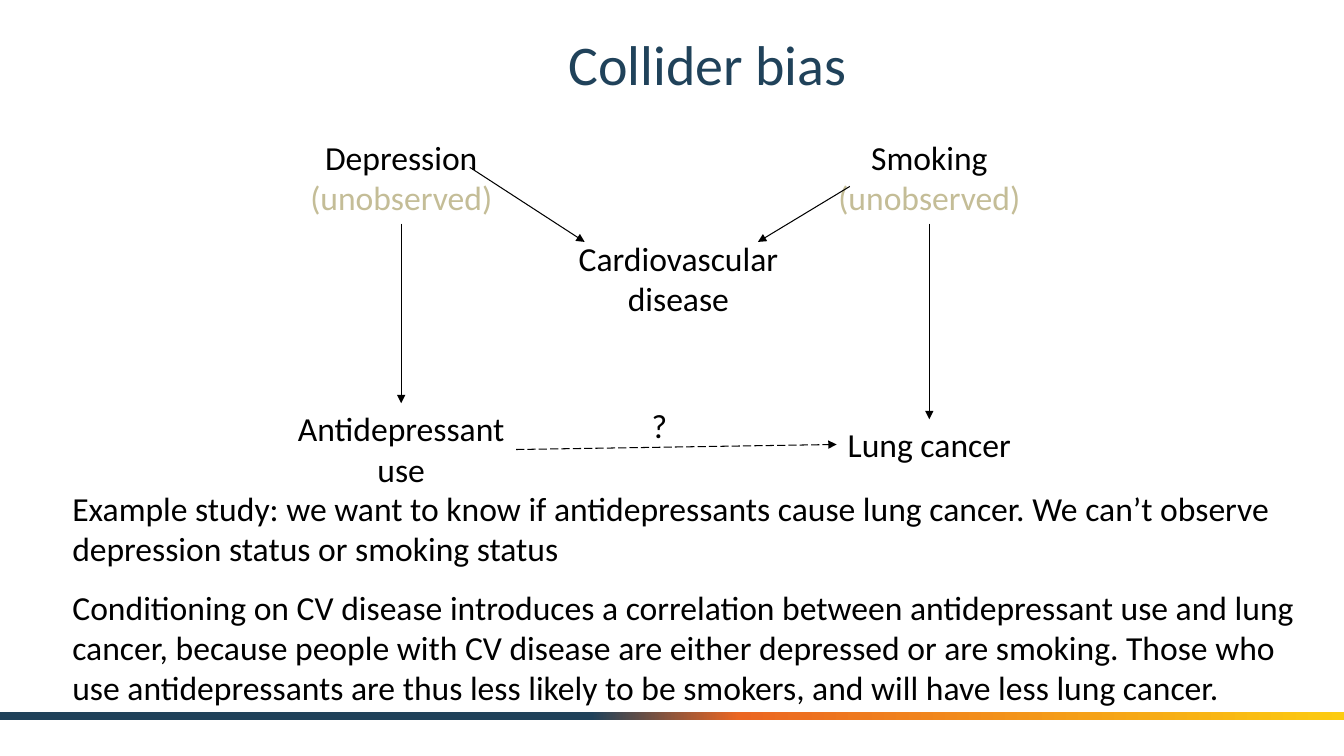
import copy

import lxml.etree
import pptx
import pptx.dml.color
import pptx.enum.dml
import pptx.enum.shapes
import pptx.enum.text
import pptx.oxml
import pptx.oxml.ns
import pptx.util

Pt = pptx.util.Pt
RGBColor = pptx.dml.color.RGBColor
PP_ALIGN = pptx.enum.text.PP_ALIGN

NAVY = RGBColor(0x20, 0x42, 0x5A)
ORANGE = RGBColor(0xEB, 0x66, 0x22)
YELLOW = RGBColor(0xFC, 0xCB, 0x10)
BLACK = RGBColor(0, 0, 0)
TAN = RGBColor(0xC4, 0xBD, 0x97)

# Content
TITLE = "Collider bias"
LEFT_X, MIDDLE_X, RIGHT_X = 286.6, 484.6, 663.8
# Lines with colours, centre, top, width
NODES = [
    ([("Depression", BLACK), ("(unobserved)", TAN)], LEFT_X, 94.3, 146),
    ([("Smoking", BLACK), ("(unobserved)", TAN)], RIGHT_X, 94.3, 146),
    ([("Cardiovascular", BLACK), ("disease", BLACK)], MIDDLE_X, 166.3, 158.4),
    ([("Antidepressant", BLACK), ("use", BLACK)], LEFT_X, 288, 163.4),
    ([("Lung cancer", BLACK)], RIGHT_X, 299.5, 132.5),
    ([("?", BLACK)], 470.9, 285.8, 26),
]
# Start, end, dashed
ARROWS = [
    ((LEFT_X, 159.8), (LEFT_X, 288), False),
    ((335.5, 119.5), (417.6, 172.8), False),
    ((607, 133.2), (541.4, 172.8), False),
    ((RIGHT_X, 159.8), (RIGHT_X, 299.5), False),
    ((368.6, 321.1), (597.6, 317.5), True),
]
# Text, top, width
NOTES = [
    ("Example study: we want to know if antidepressants cause lung cancer. "
     "We can’t observe depression status or smoking status", 344.9, 876.2),
    ("Conditioning on CV disease introduces a correlation between antidepressant "
     "use and lung cancer, because people with CV disease are either depressed or "
     "are smoking. Those who use antidepressants are thus less likely to be "
     "smokers, and will have less lung cancer.", 415.4, 891.4),
]
NOTE_LEFT = 44.6
LINE_HEIGHT, PADDING = 29, 7.2
BAR_STOPS = [(0.44, NAVY), (0.55, ORANGE), (1, YELLOW)]


def write_line(para, text, size, color, align):
    para.alignment = align
    span = para.add_run()
    span.text = text
    span.font.color.rgb = color
    for name, value in {"name": "Calibri", "size": Pt(size)}.items():
        setattr(span.font, name, value)


def add_text(page, lines, left, top, width, height, wrap, align):
    box = page.shapes.add_textbox(Pt(left), Pt(top), Pt(width), Pt(height))
    frame = box.text_frame
    frame.word_wrap = wrap
    for index, (text, color) in enumerate(lines):
        para = frame.add_paragraph() if index else frame.paragraphs[0]
        write_line(para, text, 24, color, align)


def add_arrow(page, start, end, dashed):
    arrow = page.shapes.add_connector(
        pptx.enum.shapes.MSO_CONNECTOR.STRAIGHT, *map(Pt, start + end))
    arrow.line.color.rgb = BLACK
    arrow.line.width = Pt(0.75)
    if dashed:
        arrow.line.dash_style = pptx.enum.dml.MSO_LINE.LONG_DASH
    qn = pptx.oxml.ns.qn
    properties = arrow._element.spPr
    head = lxml.etree.SubElement(properties.find(qn("a:ln")), qn("a:tailEnd"))
    head.set("type", "triangle")
    lxml.etree.SubElement(properties, qn("a:effectLst"))


def add_gradient_bar(page):
    bar = page.shapes.add_shape(
        pptx.enum.shapes.MSO_SHAPE.RECTANGLE, 0, Pt(508.3), Pt(960), Pt(5.8))
    bar.shadow.inherit = False
    bar.line.fill.background()
    bar.fill.gradient()
    bar.fill.gradient_angle = 0
    stop_list = bar._element.spPr.find(".//" + pptx.oxml.ns.qn("a:gsLst"))
    stop_list.append(copy.deepcopy(stop_list[0]))
    for stop, (position, color) in zip(bar.fill.gradient_stops, BAR_STOPS):
        stop.position = position
        stop.color.rgb = color


def main():
    deck = pptx.Presentation()
    deck.slide_width, deck.slide_height = Pt(960), Pt(540)
    page = deck.slides.add_slide(deck.slide_layouts[5])

    # Gradient bar at the foot
    add_gradient_bar(page)

    # Title
    title = page.shapes.title
    place = {"left": 98.6, "top": 12.2, "width": 813.6, "height": 66.2}
    for name, value in place.items():
        setattr(title, name, Pt(value))
    title.text_frame.vertical_anchor = pptx.enum.text.MSO_ANCHOR.MIDDLE
    write_line(title.text_frame.paragraphs[0], TITLE, 40, NAVY, PP_ALIGN.CENTER)

    # Causal diagram
    for lines, center, top, width in NODES:
        height = LINE_HEIGHT * len(lines) + PADDING
        add_text(page, lines, center - width / 2, top, width, height,
                 False, PP_ALIGN.CENTER)
    for start, end, dashed in ARROWS:
        add_arrow(page, start, end, dashed)

    # Explanation
    for row_count, (text, top, width) in enumerate(NOTES, start=2):
        height = LINE_HEIGHT * row_count + PADDING
        add_text(page, [(text, BLACK)], NOTE_LEFT, top, width, height,
                 True, PP_ALIGN.LEFT)

    deck.save("out.pptx")


if __name__ == "__main__":
    main()
